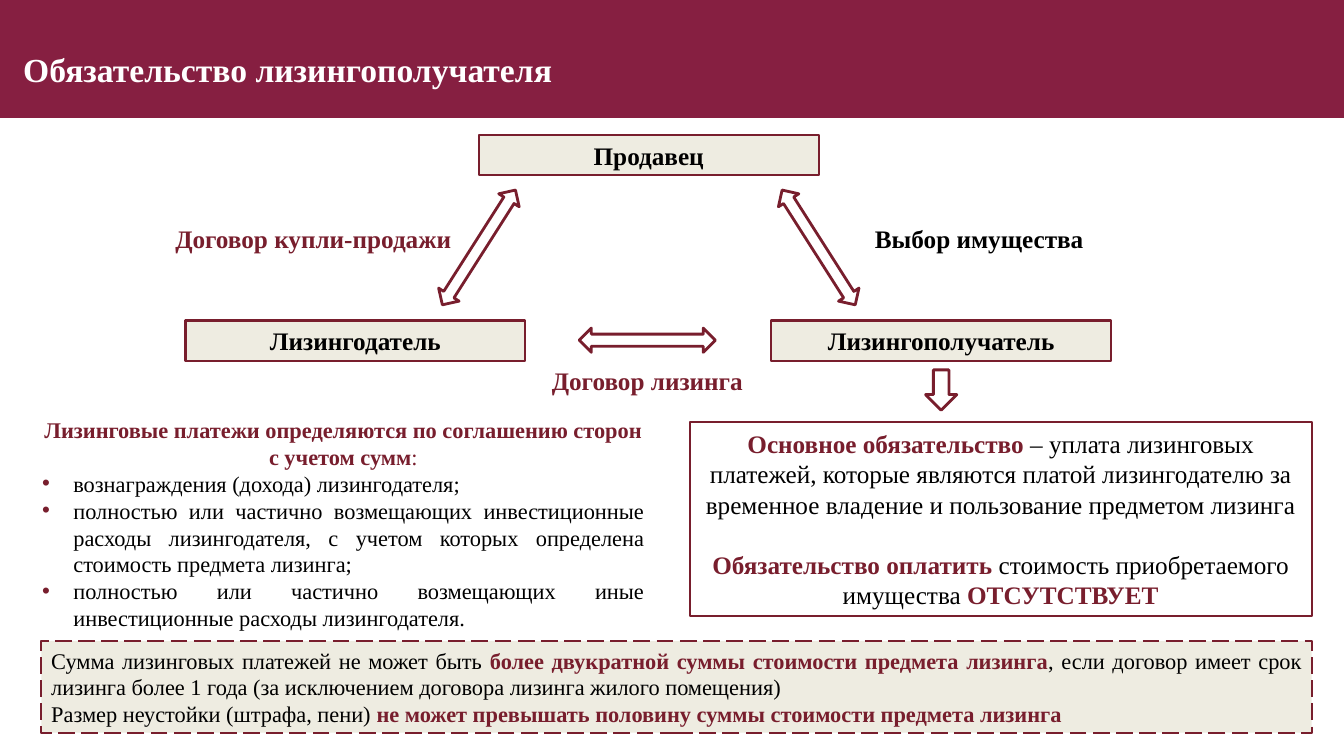
from lxml.etree import SubElement
from pptx import Presentation
from pptx.dml.color import RGBColor
from pptx.enum.dml import MSO_LINE_DASH_STYLE as Dash
from pptx.enum.shapes import MSO_SHAPE as Geo
from pptx.enum.text import MSO_ANCHOR as Anchor, PP_ALIGN as Align
from pptx.oxml.ns import qn
from pptx.util import Inches, Pt

WINE, BAND, SAND, BLACK, WHITE = "781E2D", "861F41", "EEECE1", "000000", "FFFFFF"
FACE = "Times New Roman"


def rgb(code):
    return RGBColor.from_string(code)


def plain(text):
    return text, BLACK, False


def strong(text, color=WINE):
    return text, color, True


def add_bullet(para):
    props = para._p.get_or_add_pPr()
    props.set("marL", str(Inches(0.31)))
    props.set("indent", str(-Inches(0.31)))
    SubElement(SubElement(props, qn("a:buClr")), qn("a:srgbClr"), val=WINE)
    SubElement(props, qn("a:buFont"), typeface="Arial")
    SubElement(props, qn("a:buChar"), char="•")


def write(frame, paras, size, align=Align.LEFT, anchor=Anchor.TOP):
    """Fill a frame; each paragraph is a list of (text, colour, bold) runs."""
    frame.word_wrap = True
    frame.vertical_anchor = anchor
    for i, runs in enumerate(paras):
        para = frame.add_paragraph() if i else frame.paragraphs[0]
        para.alignment = align
        for text, color, bold in runs:
            run = para.add_run()
            run.text = text
            look = {"name": FACE, "size": Pt(size), "bold": bold}
            for key, value in look.items():
                setattr(run.font, key, value)
            run.font.color.rgb = rgb(color)
    return frame.paragraphs


def add_form(slide, geo, box, fill=None, line=None, width=1.5, turn=0):
    form = slide.shapes.add_shape(geo, *map(Inches, box))
    form.shadow.inherit = False
    form.rotation = turn
    if fill:
        form.fill.solid()
        form.fill.fore_color.rgb = rgb(fill)
    else:
        form.fill.background()
    if line:
        form.line.color.rgb = rgb(line)
        form.line.width = Pt(width)
    else:
        form.line.fill.background()
    return form


def add_party(slide, left, top, name):
    form = add_form(slide, Geo.RECTANGLE, (left, top, 3.37, 0.4), SAND, WINE)
    write(form.text_frame, [[strong(name, BLACK)]], 18, Align.CENTER, Anchor.MIDDLE)


def add_text(slide, box, paras, size, align=Align.LEFT):
    frame = slide.shapes.add_textbox(*map(Inches, box)).text_frame
    return write(frame, paras, size, align)


def add_head(slide, text):
    band = add_form(slide, Geo.RECTANGLE, (0, 0, 13.33, 1.17), BAND)
    slide.shapes._spTree.insert(2, band._element)
    title = slide.shapes.title
    place = dict(left=0.13, top=0.4, width=10.16, height=0.58)
    for key, value in place.items():
        setattr(title, key, Inches(value))
    write(title.text_frame, [[strong(text, WHITE)]], 24, anchor=Anchor.MIDDLE)


def add_scheme(slide):
    for left, top, name in (
        (1.84, 3.18, "Лизингодатель"),
        (7.65, 3.18, "Лизингополучатель"),
        (4.75, 1.34, "Продавец"),
    ):
        add_party(slide, left, top, name)
    for left, top, turn in ((4.63, 1.78, 32.5), (8, 1.78, -32.5), (6.3, 2.7, 90)):
        add_form(slide, Geo.UP_DOWN_ARROW, (left, top, 0.24, 1.35),
                 line=WINE, width=2, turn=turn)
    for left, top, text, color, align in (
        (1.64, 2.17, "Договор купли-продажи", WINE, Align.LEFT),
        (8.58, 2.17, "Выбор имущества", BLACK, Align.LEFT),
        (4.87, 3.58, "Договор лизинга", WINE, Align.CENTER),
    ):
        add_text(slide, (left, top, 3.1, 0.4), [[strong(text, color)]], 18, align)
    add_form(slide, Geo.DOWN_ARROW, (9.18, 3.67, 0.31, 0.4), line=WINE, width=2)


def add_duty(slide):
    form = add_form(slide, Geo.RECTANGLE, (6.84, 4.19, 6.17, 1.92), line=WINE)
    paras = write(form.text_frame, [
        [strong("Основное обязательство "),
         plain("– уплата лизинговых платежей, которые являются платой "
               "лизингодателю за временное владение и пользование "
               "предметом лизинга")],
        [strong("Обязательство оплатить "),
         plain("стоимость приобретаемого имущества "),
         strong("ОТСУТСТВУЕТ")],
    ], 18, Align.CENTER, Anchor.MIDDLE)
    paras[1].space_before = Pt(21.6)


def add_sums(slide):
    items = (
        "вознаграждения (дохода) лизингодателя;",
        "полностью или частично возмещающих инвестиционные расходы "
        "лизингодателя, с учетом которых определена стоимость предмета лизинга;",
        "полностью или частично возмещающих иные инвестиционные расходы "
        "лизингодателя.",
    )
    lead = [strong("Лизинговые платежи определяются по соглашению сторон "
                   "с учетом сумм"), (":", WINE, False)]
    paras = add_text(slide, (0.32, 4.08, 6.17, 2.26),
                     [lead] + [[plain(item)] for item in items], 16, Align.JUSTIFY)
    paras[0].alignment = Align.CENTER
    for para in paras[1:]:
        add_bullet(para)


def add_limit(slide):
    form = add_form(slide, Geo.RECTANGLE, (0.41, 6.36, 12.6, 0.91), SAND, WINE)
    form.line.dash_style = Dash.LONG_DASH
    write(form.text_frame, [
        [plain("Сумма лизинговых платежей не может быть "),
         strong("более двукратной суммы стоимости предмета лизинга"),
         plain(", если договор имеет срок лизинга более 1 года "
               "(за исключением договора лизинга жилого помещения)")],
        [plain("Размер неустойки (штрафа, пени) "),
         strong("не может превышать половину суммы стоимости предмета лизинга")],
    ], 16, Align.JUSTIFY, Anchor.MIDDLE)


def main():
    deck = Presentation()
    deck.slide_width, deck.slide_height = Inches(13.33), Inches(7.5)
    slide = deck.slides.add_slide(deck.slide_layouts[5])
    add_head(slide, "Обязательство лизингополучателя")
    add_scheme(slide)
    add_duty(slide)
    add_sums(slide)
    add_limit(slide)
    deck.save("out.pptx")


if __name__ == "__main__":
    main()
